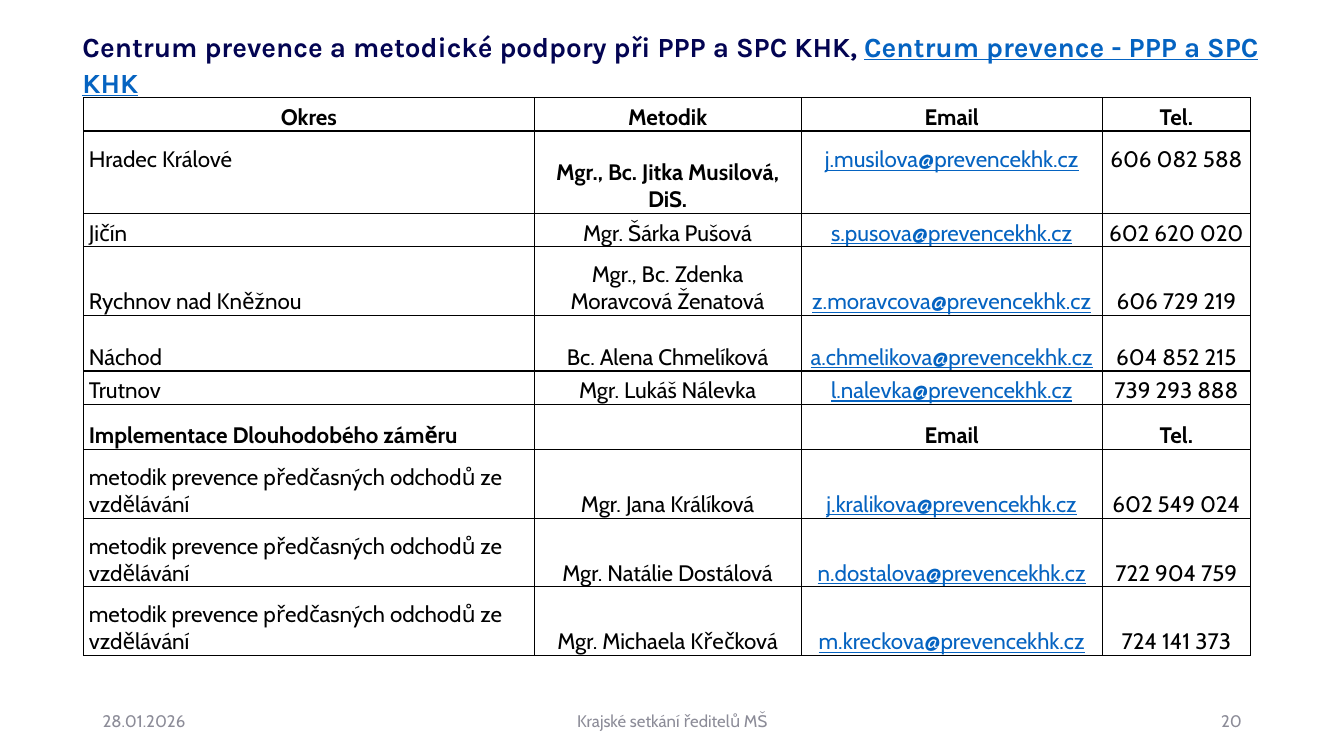
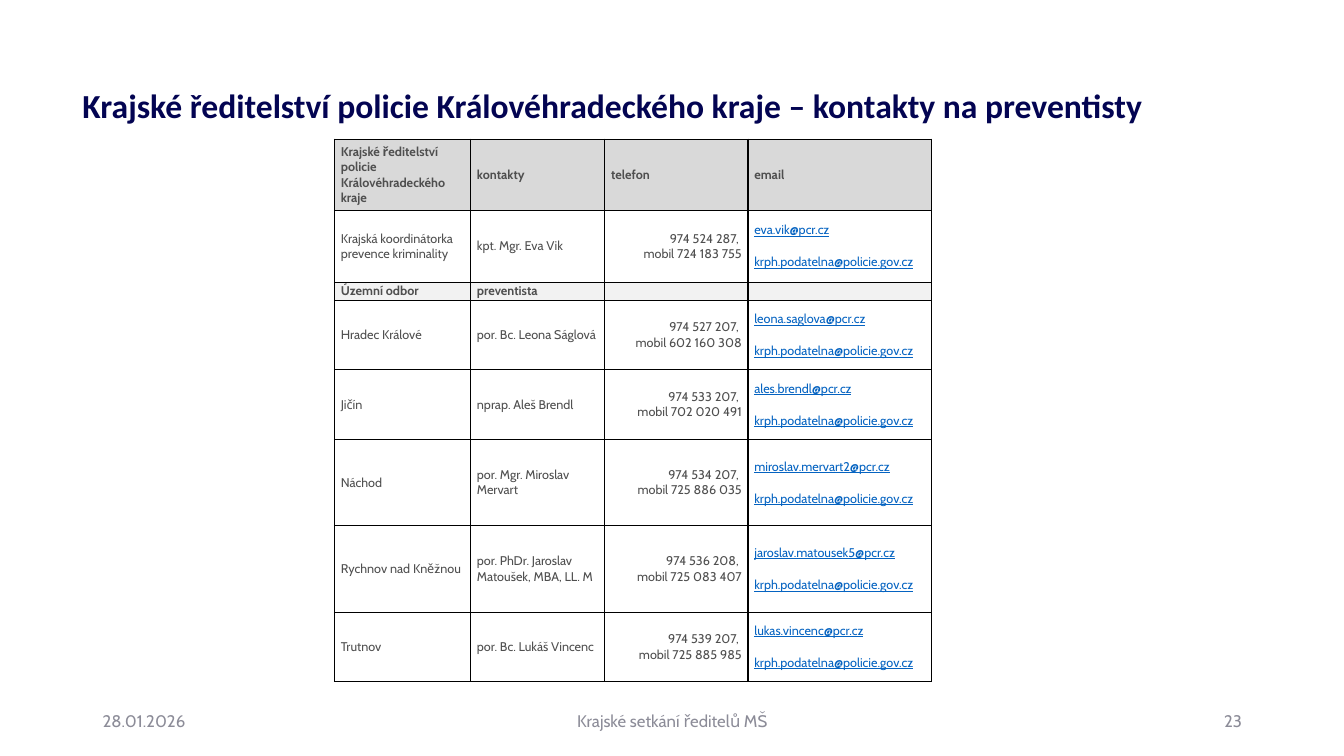
from dataclasses import dataclass

from lxml import etree
from pptx import Presentation
from pptx import util as u
from pptx.dml.color import RGBColor
from pptx.enum import text
from pptx.oxml.ns import qn


@dataclass(frozen=True)
class Theme:
    navy: str = "030452"
    link: str = "0563C1"
    black: str = "000000"
    grey_text: str = "4F4F4F"
    footer: str = "8C8C98"
    head_fill: str = "D9D9D9"
    section_fill: str = "F2F2F2"
    font: str = "Cabin"
    footer_size: float = 12
    border_width: float = 1


theme = Theme()
left, center, right = text.PP_ALIGN.LEFT, text.PP_ALIGN.CENTER, text.PP_ALIGN.RIGHT
bottom, middle = text.MSO_ANCHOR.BOTTOM, text.MSO_ANCHOR.MIDDLE


def style_font(font, name, size, color, bold=False, underline=False):
    font.name, font.size = name, u.Pt(size)
    font.bold, font.underline = bold, underline
    font.color.rgb = RGBColor.from_string(color)


def add_text_box(page, x, y, width, height, align=left):
    box = page.shapes.add_textbox(u.Cm(x), u.Cm(y), u.Cm(width), u.Cm(height))
    frame = box.text_frame
    frame.word_wrap = True
    frame.vertical_anchor = middle
    frame.margin_top = frame.margin_bottom = 0
    para = frame.paragraphs[0]
    para.alignment = align
    return para


# Contacts of the prevention centre
early_leaving = "metodik prevence předčasných odchodů ze vzdělávání"
center_rows = [
    ("Okres", "Metodik", "Email", "Tel."),
    ("Hradec Králové", "Mgr., Bc. Jitka Musilová, DiS.", "j.musilova@prevencekhk.cz", "606 082 588"),
    ("Jičín", "Mgr. Šárka Pušová", "s.pusova@prevencekhk.cz", "602 620 020"),
    ("Rychnov nad Kněžnou", "Mgr., Bc. Zdenka Moravcová Ženatová",
     "z.moravcova@prevencekhk.cz", "606 729 219"),
    ("Náchod", "Bc. Alena Chmelíková", "a.chmelikova@prevencekhk.cz", "604 852 215"),
    ("Trutnov", "Mgr. Lukáš Nálevka", "l.nalevka@prevencekhk.cz", "739 293 888"),
    ("Implementace Dlouhodobého záměru", "", "Email", "Tel."),
    (early_leaving, "Mgr. Jana Králíková", "j.kralikova@prevencekhk.cz", "602 549 024"),
    (early_leaving, "Mgr. Natálie Dostálová", "n.dostalova@prevencekhk.cz", "722 904 759"),
    (early_leaving, "Mgr. Michaela Křečková", "m.kreckova@prevencekhk.cz", "724 141 373"),
]

# Contacts of the police; every officer also shares the office mailbox
officers = [
    ("Krajská koordinátorka prevence kriminality", "kpt. Mgr. Eva Vik",
     "974 524 287", "724 183 755", "eva.vik"),
    ("Hradec Králové", "por. Bc. Leona Ságlová", "974 527 207", "602 160 308", "leona.saglova"),
    ("Jičín", "nprap. Aleš Brendl", "974 533 207", "702 020 491", "ales.brendl"),
    ("Náchod", "por. Mgr. Miroslav Mervart", "974 534 207", "725 886 035", "miroslav.mervart2"),
    ("Rychnov nad Kněžnou", "por. PhDr. Jaroslav Matoušek, MBA, LL. M",
     "974 536 208", "725 083 407", "jaroslav.matousek5"),
    ("Trutnov", "por. Bc. Lukáš Vincenc", "974 539 207", "725 885 985", "lukas.vincenc"),
]
officer_rows = [
    (district, name, f"{phone}, \vmobil {mobile}", f"{mail}@pcr.cz\nkrph.podatelna@policie.gov.cz")
    for district, name, phone, mobile, mail in officers
]
police_rows = [
    ("Krajské ředitelství policie Královéhradeckého kraje", "kontakty", "telefon", "email"),
    officer_rows[0],
    ("Územní odbor", "preventista", "", ""),
    *officer_rows[1:],
]

# Title parts are (words, colour); raised cells map (row, column) to a bottom margin in cm
pages = [
    dict(
        number="20",
        title=[("Centrum prevence a metodické podpory při PPP a SPC KHK, ", theme.navy),
               ("Centrum prevence - PPP a SPC KHK", theme.link)],
        title_at=(1.83, 0.7, 31.47, 1.8), title_font="Karla", title_size=19.8,
        rows=center_rows, table_at=(2.11, 2.46),
        widths=(11.35, 6.73, 7.59, 3.73),
        heights=(0.84, 2.08, 0.84, 1.73, 1.4, 0.84, 1.14, 1.73, 1.73, 1.73),
        aligns=(left, center, center, center), head_aligns=(center,) * 4,
        anchor=bottom, inset=0.13, size=16, color=theme.black, fills={},
        bold_rows={0, 6}, bold_cells={(1, 1)},
        raised={(1, 0): 1.01, (1, 2): 1.01, (1, 3): 1.01},
    ),
    dict(
        number="23",
        title=[("Krajské ředitelství policie Královéhradeckého kraje – kontakty na preventisty",
                theme.navy)],
        title_at=(1.83, 1.87, 29.21, 1.5), title_font="Calibri", title_size=24,
        rows=police_rows, table_at=(8.43, 3.51),
        widths=(3.43, 3.38, 3.61, 4.62),
        heights=(1.8, 1.8, 0.46, 1.75, 1.75, 2.18, 2.18, 1.75),
        aligns=(left, left, right, left), head_aligns=(left,) * 4,
        anchor=middle, inset=0.16, size=9, color=theme.grey_text,
        fills={0: theme.head_fill, 2: theme.section_fill},
        bold_rows={0, 2}, bold_cells=set(), raised={},
    ),
]

deck = Presentation()
deck.slide_width, deck.slide_height = u.Cm(33.87), u.Cm(19.05)

for content in pages:
    page = deck.slides.add_slide(deck.slide_layouts[6])

    # Title
    para = add_text_box(page, *content["title_at"])
    para.line_spacing = 1.07
    for words, color in content["title"]:
        span = para.add_run()
        span.text = words
        style_font(span.font, content["title_font"], content["title_size"], color,
                   bold=True, underline=color == theme.link)

    # Footer
    for words, x, width, align in (
        ("28.01.2026", 2.34, 7.62, left),
        ("Krajské setkání ředitelů MŠ", 11.23, 11.43, center),
        (content["number"], 23.93, 7.62, right),
    ):
        para = add_text_box(page, x, 17.65, width, 1.02, align)
        para.text = words
        style_font(para.font, theme.font, theme.footer_size, theme.footer)

    # Table grid
    rows, widths, heights = content["rows"], content["widths"], content["heights"]
    x, y = content["table_at"]
    table = page.shapes.add_table(len(rows), len(widths), u.Cm(x), u.Cm(y),
                                  u.Cm(sum(widths)), u.Cm(sum(heights))).table
    table.first_row = table.horz_banding = False
    for column, width in zip(table.columns, widths):
        column.width = u.Cm(width)
    for row, height in zip(table.rows, heights):
        row.height = u.Cm(height)

    # Table cells
    for r, values in enumerate(rows):
        aligns = content["aligns"] if r else content["head_aligns"]
        for c, value in enumerate(values):
            cell = table.cell(r, c)
            cell.vertical_anchor = content["anchor"]
            cell.margin_left = cell.margin_right = u.Cm(content["inset"])
            cell.margin_top = 0
            cell.margin_bottom = u.Cm(content["raised"].get((r, c), 0))

            properties = cell._tc.get_or_add_tcPr()
            for side in ("a:lnL", "a:lnR", "a:lnT", "a:lnB"):
                line = etree.SubElement(properties, qn(side), w=str(u.Pt(theme.border_width)))
                fill = etree.SubElement(line, qn("a:solidFill"))
                etree.SubElement(fill, qn("a:srgbClr"), val=theme.black)
            if r in content["fills"]:
                cell.fill.solid()
                cell.fill.fore_color.rgb = RGBColor.from_string(content["fills"][r])
            else:
                cell.fill.background()

            cell.text_frame.text = value
            is_link = "@" in value
            is_bold = r in content["bold_rows"] or (r, c) in content["bold_cells"]
            for index, para in enumerate(cell.text_frame.paragraphs):
                para.alignment = aligns[c]
                if index:
                    para.space_before = u.Pt(12)
                style_font(para.font, theme.font, content["size"],
                           theme.link if is_link else content["color"], is_bold, is_link)
                if not value:
                    para._p.get_or_add_endParaRPr().set("sz", str(content["size"] * 100))

deck.save("out.pptx")
